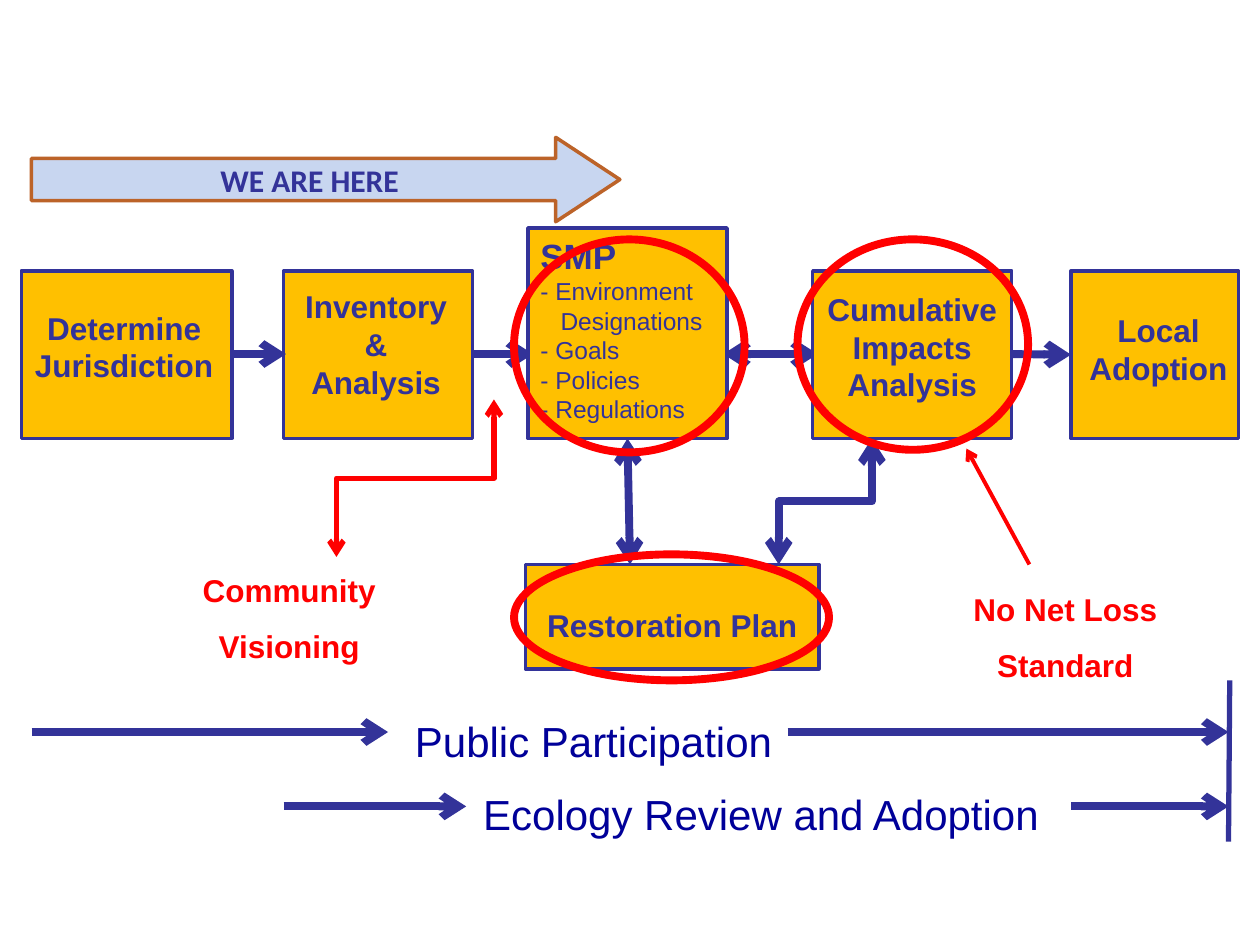
from lxml.etree import SubElement
from pptx import Presentation
from pptx.dml.color import RGBColor
from pptx.enum.shapes import MSO_CONNECTOR, MSO_SHAPE
from pptx.enum.text import MSO_ANCHOR, MSO_AUTO_SIZE, PP_ALIGN
from pptx.oxml.ns import qn
from pptx.util import Emu, Pt

PX = 9144  # EMU per px, 100 px to the inch
COLORS = {"navy": "333399", "blue": "000099", "gold": "FFC000", "red": "FF0000",
          "sky": "C8D6F0", "rust": "BC6329"}
LABEL = {"name": "Arial", "size": Pt(18), "bold": True}
STAGE = {"name": "Arial", "size": Pt(24), "bold": False}
ITEM = {"name": "Arial", "size": Pt(14), "bold": False}
HEADING = {"name": "Arial", "size": Pt(20), "bold": True}
BANNER = {"name": "Calibri", "size": Pt(18), "bold": True}


def px(value):
    return Emu(round(value * PX))


def rgb(color):
    return RGBColor.from_string(COLORS[color])


def assign(target, values):
    for name, value in values.items():
        setattr(target, name, value)


class FlowSlide:
    def __init__(self, slide):
        self.shapes = slide.shapes

    def outline(self, line, color, width):
        line.color.rgb = rgb(color)
        line.width = Pt(width)

    def shape(self, kind, box, fill, color, width):
        shape = self.shapes.add_shape(kind, *map(px, box))
        shape.shadow.inherit = False
        if fill:
            shape.fill.solid()
            shape.fill.fore_color.rgb = rgb(fill)
        else:
            shape.fill.background()
        self.outline(shape.line, color, width)
        return shape

    def step(self, *box):
        return self.shape(MSO_SHAPE.RECTANGLE, box, "gold", "navy", 2)

    def ring(self, *box):
        return self.shape(MSO_SHAPE.OVAL, box, None, "red", 4.5)

    def fill_paragraph(self, paragraph, text, font, color, align, spacing=None):
        assign(paragraph, {"text": text, "alignment": align, "line_spacing": spacing})
        assign(paragraph.font, font)
        paragraph.font.color.rgb = rgb(color)

    def text(self, box, lines, font=LABEL, color="navy", align=PP_ALIGN.CENTER,
             spacing=None, fit=MSO_AUTO_SIZE.SHAPE_TO_FIT_TEXT):
        frame = self.shapes.add_textbox(*map(px, box)).text_frame
        assign(frame, {"word_wrap": True, "auto_size": fit})
        for number, line in enumerate(lines):
            paragraph = frame.add_paragraph() if number else frame.paragraphs[0]
            self.fill_paragraph(paragraph, line, font, color, align, spacing)
        return frame

    def finish(self, connector, color, width, ends):
        self.outline(connector.line, color, width)
        properties = connector._element.spPr
        for end in ends:
            SubElement(properties.find(qn("a:ln")), qn(f"a:{end}End"), type="arrow")
        SubElement(properties, qn("a:effectLst"))
        return connector

    def line(self, x1, y1, x2, y2, color="navy", width=4.5, ends=("tail",)):
        connector = self.shapes.add_connector(
            MSO_CONNECTOR.STRAIGHT, *map(px, (x1, y1, x2, y2)))
        return self.finish(connector, color, width, ends)

    def elbow(self, x1, y1, x2, y2, color, width):
        """Bent line that leaves and arrives vertically, going down and left."""
        across, down = x1 - x2, y2 - y1
        left, top = (x1 + x2 - down) / 2, (y1 + y2 - across) / 2
        connector = self.shapes.add_connector(
            MSO_CONNECTOR.ELBOW, *map(px, (left, top, left + down, top + across)))
        connector._element.spPr.find(qn("a:xfrm")).set("rot", "5400000")
        return self.finish(connector, color, width, ("head", "tail"))


def main():
    deck = Presentation()
    deck.slide_width, deck.slide_height = px(1000), px(750)
    flow = FlowSlide(deck.slides.add_slide(deck.slide_layouts[6]))
    both = ("head", "tail")
    flow_y, public_y, review_y = 281, 581, 640

    # Links that run behind the steps
    flow.line(364, flow_y, 423, flow_y)
    to_adoption = flow.line(800, flow_y, 850, flow_y)
    flow.line(574, flow_y, 649, flow_y, ends=both)
    to_restoration = flow.line(498, 348, 500, 448, ends=both)

    # Steps
    flow.step(417, 448, 233, 83)
    adoption = flow.step(850, 215, 133, 133)
    flow.step(645, 215, 158, 133)
    program = flow.step(419, 181, 158, 167)
    flow.step(225, 215, 150, 133)
    to_adoption.end_connect(adoption, 1)
    to_restoration.begin_connect(program, 2)

    # Step labels
    flow.text((225, 223, 147, 101), ["Inventory", "&", "Analysis"])
    contents = flow.text(
        (419, 181, 158, 162),
        ["SMP", "- Environment", "Designations", "- Goals", "- Policies", "- Regulations"],
        ITEM, align=PP_ALIGN.LEFT)
    heading, _, continuation = contents.paragraphs[:3]
    assign(heading.font, HEADING)
    continuation._p.get_or_add_pPr().set("marL", str(px(16)))
    flow.text((645, 225, 158, 101), ["Cumulative Impacts Analysis"])
    flow.text((853, 242, 133, 71), ["Local Adoption"])
    flow.text((421, 461, 225, 50), ["Restoration Plan"], spacing=1.5)

    # Ecology review span
    flow.text((308, 581, 592, 100), ["Ecology Review and Adoption"], STAGE, "blue",
              spacing=2.0, fit=MSO_AUTO_SIZE.NONE)
    flow.line(225, review_y, 370, review_y)
    flow.line(850, review_y, 975, review_y)
    flow.line(976, 540, 975, 668, width=3, ends=())

    # First step and the link to the inventory
    flow.line(169, flow_y, 227, flow_y)
    flow.step(17, 215, 167, 133)
    flow.text((17, 240, 163, 71), ["Determine Jurisdiction"])
    flow.elbow(692, 348, 618, 448, "navy", 4.5)

    # Public participation span
    flow.line(25, public_y, 308, public_y)
    flow.text((175, 523, 592, 100), ["Public Participation"], STAGE, "blue",
              spacing=2.0, fit=MSO_AUTO_SIZE.NONE)
    flow.line(625, public_y, 975, public_y)

    # Red highlights and remarks
    flow.ring(408, 190, 183, 169)
    flow.ring(633, 190, 183, 167)
    flow.ring(408, 440, 250, 100)
    flow.line(817, 448, 767, 356, "red", 2.25)
    flow.text((733, 448, 225, 101), ["No Net Loss Standard"], color="red", spacing=1.5)

    # Progress banner
    banner = flow.shape(MSO_SHAPE.RIGHT_ARROW, (25, 109, 467, 67), "sky", "rust", 2)
    banner.adjustments[1] = 0.76
    banner.text_frame.vertical_anchor = MSO_ANCHOR.MIDDLE
    flow.fill_paragraph(banner.text_frame.paragraphs[0], "WE ARE HERE", BANNER, "navy",
                        PP_ALIGN.CENTER)

    # Community visioning
    flow.text((117, 433, 225, 95), ["Community Visioning"], color="red", spacing=1.5)
    flow.elbow(392, 317, 267, 442, "red", 3)

    deck.save("out.pptx")


if __name__ == "__main__":
    main()
